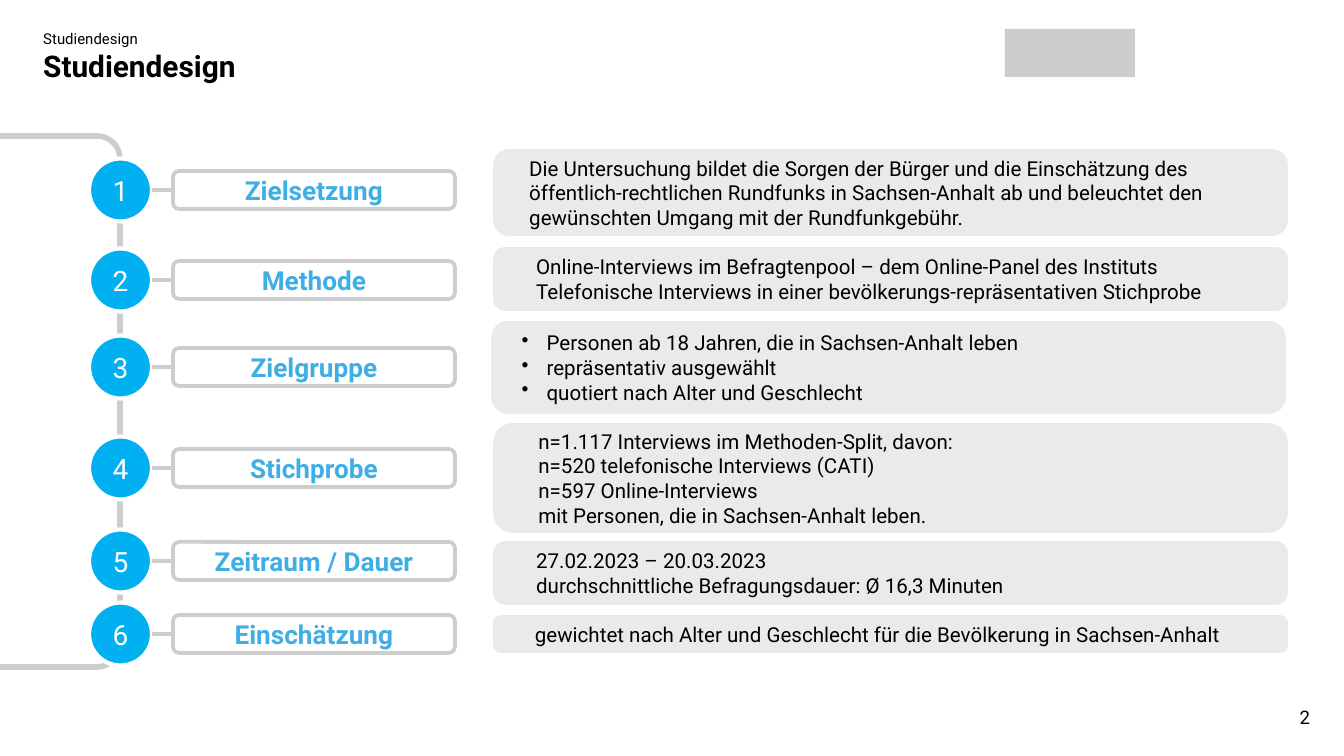
"""Builds the study design slide: six numbered steps with a description each."""
from dataclasses import dataclass

from lxml import etree
from pptx import Presentation
from pptx import util as u
from pptx.dml.color import RGBColor
from pptx.enum import shapes, text
from pptx.oxml.ns import qn

SCALE = 914400 / 134.4


@dataclass(frozen=True)
class Theme:
    font: str = "Roboto"
    ink: str = "000000"
    white: str = "FFFFFF"
    rail: str = "CDCDCD"
    panel: str = "EAEAEA"
    badge: str = "00B0F0"
    label: str = "3EAEE4"
    kicker_size: int = 8
    number_size: int = 10
    body_size: int = 11
    label_size: int = 14
    badge_size: int = 15
    title_size: int = 16


THEME = Theme()
BADGE, LABEL_LEFT, LABEL_WIDTH, LABEL_HEIGHT = 63, 173, 282, 38
PANEL_LEFT, PANEL_WIDTH = 495, 791

# label, badge centre, panel top, panel height, text indent, description
STEPS = [
    ("Zielsetzung", 190, 151, 83, 17, [
        "Die Untersuchung bildet die Sorgen der Bürger und die Einschätzung des "
        "öffentlich-rechtlichen Rundfunks in Sachsen-Anhalt ab und beleuchtet den "
        "gewünschten Umgang mit der Rundfunkgebühr."]),
    ("Methode", 280, 249, 60, 25, [
        "Online-Interviews im Befragtenpool – dem Online-Panel des Instituts",
        "Telefonische Interviews in einer bevölkerungs-repräsentativen Stichprobe"]),
    ("Zielgruppe", 367, 323, 89, 36, [
        "Personen ab 18 Jahren, die in Sachsen-Anhalt leben",
        "repräsentativ ausgewählt",
        "quotiert nach Alter und Geschlecht"]),
    ("Stichprobe", 468, 425, 106, 25, [
        "n=1.117 Interviews im Methoden-Split, davon:",
        "n=520 telefonische Interviews (CATI)",
        "n=597 Online-Interviews",
        "mit Personen, die in Sachsen-Anhalt leben."]),
    ("Zeitraum / Dauer", 561, 543, 60, 25, [
        "27.02.2023 – 20.03.2023\vdurchschnittliche Befragungsdauer: Ø 16,3 Minuten"]),
    ("Einschätzung", 634, 617, 34, 25, [
        "gewichtet nach Alter und Geschlecht für die Bevölkerung in Sachsen-Anhalt"]),
]
BULLETED = "Zielgruppe"


def px(length):
    """Turn a length in px into EMU."""
    return u.Emu(round(length * SCALE))


def rgb(code):
    """Turn a hex code into a colour."""
    return RGBColor.from_string(code)


def add_paragraph(frame, content, size, color, bold=False,
                  align=text.PP_ALIGN.LEFT, indent=0, hanging=0):
    """Fill the empty first paragraph or append another one."""
    para = frame.paragraphs[0]
    if para.runs:
        para = frame.add_paragraph()
    para.text = content
    para.alignment = align
    props = para._p.get_or_add_pPr()
    props.set("marL", str(px(indent)))
    props.set("indent", str(px(-hanging)))
    if hanging:
        etree.SubElement(props, qn("a:buChar"), char="•")
    para.font.name = THEME.font
    para.font.size = u.Pt(size)
    para.font.bold = bold
    para.font.color.rgb = rgb(color)


def add_shape(page, kind, bounds, fill=None, line=None, width=2):
    """Add a flat preset shape with middle-anchored text."""
    shape = page.shapes.add_shape(kind, *map(px, bounds))
    shape.shadow.inherit = False
    if fill:
        shape.fill.solid()
        shape.fill.fore_color.rgb = rgb(fill)
    else:
        shape.fill.background()
    if line:
        shape.line.color.rgb = rgb(line)
        shape.line.width = u.Pt(width)
    else:
        shape.line.fill.background()
    shape.text_frame.word_wrap = True
    shape.text_frame.vertical_anchor = text.MSO_ANCHOR.MIDDLE
    return shape


def add_textbox(page, bounds):
    """Add a wrapping text box and return its frame."""
    frame = page.shapes.add_textbox(*map(px, bounds)).text_frame
    frame.word_wrap = True
    return frame


def add_tie(page, middle):
    """Add the short line between a badge and its label."""
    tie = page.shapes.add_connector(
        shapes.MSO_CONNECTOR.STRAIGHT,
        px(152), px(middle), px(LABEL_LEFT), px(middle))
    tie.line.color.rgb = rgb(THEME.rail)
    tie.line.width = u.Pt(2.25)
    etree.SubElement(tie._element.spPr, qn("a:effectLst"))


def add_step(page, number, label, middle):
    """Add a numbered badge, its tie and its label."""
    badge = add_shape(page, shapes.MSO_SHAPE.OVAL,
                      (89, middle - BADGE / 2, BADGE, BADGE),
                      THEME.badge, THEME.white, 2.25)
    add_paragraph(badge.text_frame, str(number), THEME.badge_size, THEME.white,
                  align=text.PP_ALIGN.CENTER)
    add_tie(page, middle)
    box = add_shape(page, shapes.MSO_SHAPE.ROUNDED_RECTANGLE,
                    (LABEL_LEFT, middle - LABEL_HEIGHT / 2, LABEL_WIDTH, LABEL_HEIGHT),
                    line=THEME.rail)
    add_paragraph(box.text_frame, label, THEME.label_size, THEME.label, True,
                  text.PP_ALIGN.CENTER)


def add_panel(page, top, height, lines, indent, hanging):
    """Add a grey panel holding a description."""
    panel = add_shape(page, shapes.MSO_SHAPE.ROUNDED_RECTANGLE,
                      (PANEL_LEFT - (2 if hanging else 0), top, PANEL_WIDTH, height),
                      THEME.panel, THEME.panel)
    for line in lines:
        add_paragraph(panel.text_frame, line, THEME.body_size, THEME.ink,
                      indent=indent, hanging=hanging)


def add_header(page):
    """Add the kicker, the title and a plain block at the top right."""
    frame = add_textbox(page, (30, 23, 958, 79))
    add_paragraph(frame, "Studiendesign", THEME.kicker_size, THEME.ink)
    add_paragraph(frame, "Studiendesign", THEME.title_size, THEME.ink, True)
    add_shape(page, shapes.MSO_SHAPE.RECTANGLE, (1005, 29, 130, 48), THEME.rail)


def add_page_number(page, number):
    """Add the page number at the bottom right."""
    frame = add_textbox(page, (1263, 706, 47, 23))
    frame.margin_left = frame.margin_right = frame.margin_top = frame.margin_bottom = 0
    frame.vertical_anchor = text.MSO_ANCHOR.MIDDLE
    add_paragraph(frame, str(number), THEME.number_size, THEME.ink,
                  align=text.PP_ALIGN.RIGHT)


def main():
    """Build and save the deck."""
    deck = Presentation()
    deck.slide_width, deck.slide_height = px(1344), px(756)
    page = deck.slides.add_slide(deck.slide_layouts[6])
    add_header(page)
    rail = add_shape(page, shapes.MSO_SHAPE.ROUNDED_RECTANGLE,
                     (-207, 136, 327, 531), line=THEME.rail, width=3)
    rail.adjustments[0] = 0.07
    for number, (label, middle, top, height, indent, lines) in enumerate(STEPS, 1):
        add_step(page, number, label, middle)
        add_panel(page, top, height, lines, indent, 25 if label == BULLETED else 0)
    add_page_number(page, 2)
    deck.save("out.pptx")


if __name__ == "__main__":
    main()
